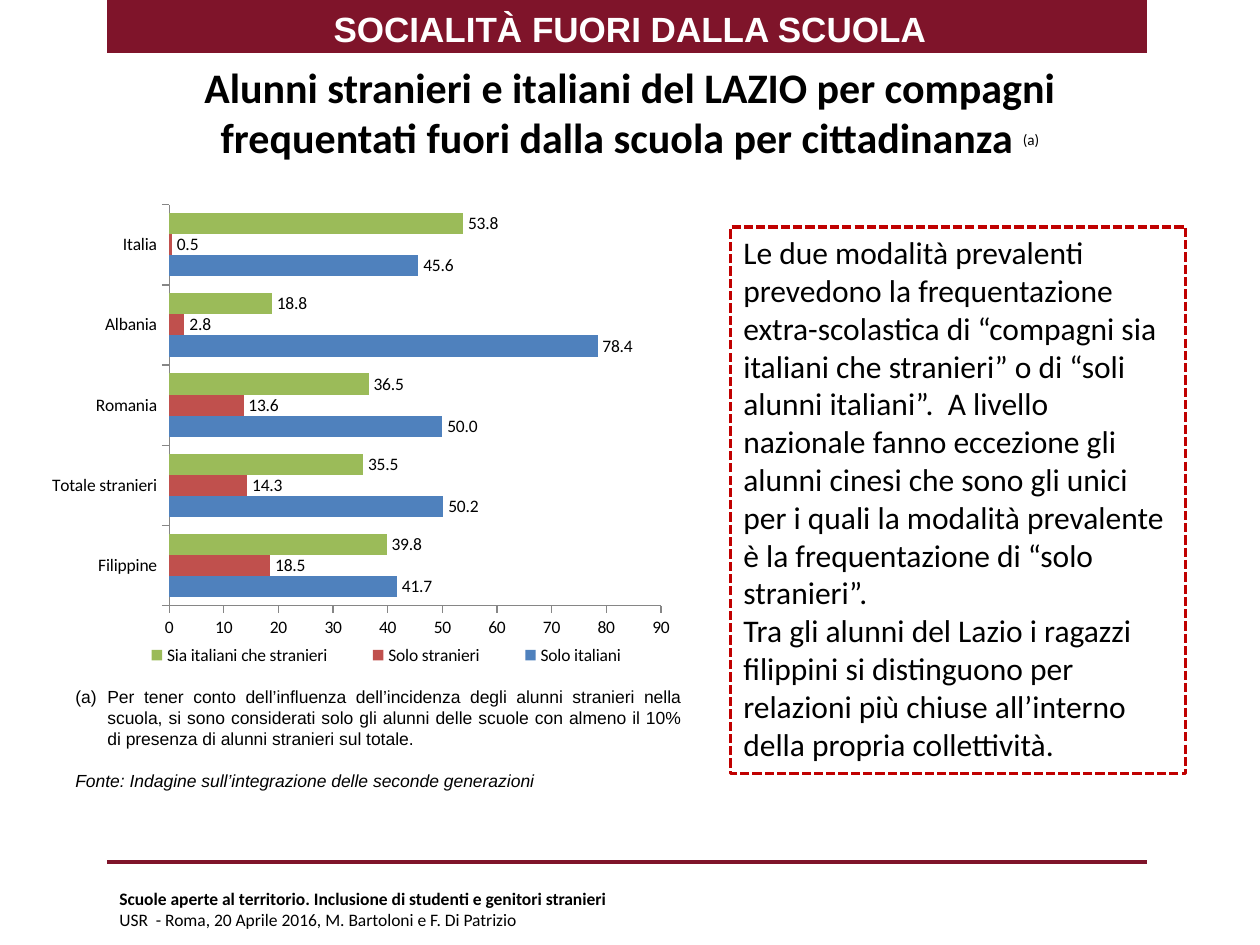
import pptx
import pptx.util
import pptx.chart.data
import pptx.dml.color
import pptx.enum.chart
import pptx.enum.dml
import pptx.enum.shapes
import pptx.enum.text
import pptx.oxml

PX = 914400 // 126
Pt = pptx.util.Pt
RGB = pptx.dml.color.RGBColor
ALIGN = pptx.enum.text.PP_ALIGN
ANCHOR = pptx.enum.text.MSO_ANCHOR
CHART = pptx.enum.chart
NS = 'xmlns:{0}="http://schemas.openxmlformats.org/drawingml/2006/{1}"'

BURGUNDY = RGB(0x7F, 0x14, 0x2A)
DASH_RED = RGB(0xC0, 0x00, 0x00)
BLACK = RGB(0x00, 0x00, 0x00)
WHITE = RGB(0xFF, 0xFF, 0xFF)
AXIS_GREY = RGB(0x86, 0x86, 0x86)
BLUE = RGB(0x4F, 0x81, 0xBD)
RED = RGB(0xC0, 0x50, 0x4D)
GREEN = RGB(0x9B, 0xBB, 0x59)


def add_run(paragraph, text, size, name="Calibri", color=BLACK, **formats):
    run = paragraph.add_run()
    run.text = text
    run.font.color.rgb = color
    for key, value in dict(size=Pt(size), name=name, **formats).items():
        setattr(run.font, key, value)
    return run


def set_layout(element, before, x, y, w, h, inner=False):
    """Place a chart part by fractions of the chart area."""
    target = '<c:layoutTarget val="inner"/>' if inner else ""
    sizes = "".join(f'<c:{key} val="{value}"/>' for key, value in zip("xywh", (x, y, w, h)))
    for old in element.findall(pptx.oxml.ns.qn("c:layout")):
        element.remove(old)
    element.find(pptx.oxml.ns.qn(before)).addprevious(pptx.oxml.parse_xml(
        f'<c:layout {NS.format("c", "chart")}><c:manualLayout>{target}'
        f'<c:xMode val="edge"/><c:yMode val="edge"/>{sizes}</c:manualLayout></c:layout>'))


prs = pptx.Presentation()
prs.slide_width, prs.slide_height = 1260 * PX, 945 * PX
slide = prs.slides.add_slide(prs.slide_layouts[5])
shapes = slide.shapes

# Header band and footer rule
band = shapes.add_shape(pptx.enum.shapes.MSO_SHAPE.RECTANGLE, 107 * PX, 0, 1040 * PX, 53 * PX)
band.shadow.inherit = False
band.fill.solid()
band.fill.fore_color.rgb = BURGUNDY
band.line.fill.background()

rule = shapes.add_connector(pptx.enum.shapes.MSO_CONNECTOR.STRAIGHT,
                            107 * PX, 862 * PX, 1147 * PX, 862 * PX)
rule.line.color.rgb = BURGUNDY
rule.line.width = Pt(2)
rule._element.spPr.append(pptx.oxml.parse_xml(f'<a:effectLst {NS.format("a", "main")}/>'))

# Title
title = shapes.title
title.left, title.top, title.width, title.height = 0, 69 * PX, 1260 * PX, 129 * PX
title_frame = title.text_frame
title_frame.auto_size = pptx.enum.text.MSO_AUTO_SIZE.NONE
title_frame.vertical_anchor = ANCHOR.MIDDLE
title_frame.margin_top, title_frame.margin_bottom = 0, 44 * PX
heading = title_frame.paragraphs[0]
heading.alignment = ALIGN.CENTER
add_run(heading, "Alunni stranieri e italiani del LAZIO per compagni", 24, bold=True)
heading.add_line_break()
line_break = heading._p.find(pptx.oxml.ns.qn("a:br"))
line_break.append(pptx.oxml.parse_xml(f'<a:rPr {NS.format("a", "main")} sz="2400"/>'))
add_run(heading, "frequentati fuori dalla scuola per cittadinanza ", 24, bold=True)
note_mark = add_run(heading, "(a)", 15, bold=False)
note_mark.font._element.set("baseline", "30000")

# Section name on the band
section = shapes.add_textbox(0, -1 * PX, 1260 * PX, 59 * PX).text_frame
section.word_wrap = True
section.vertical_anchor = ANCHOR.MIDDLE
section.paragraphs[0].alignment = ALIGN.CENTER
add_run(section.paragraphs[0], "SOCIALITÀ FUORI DALLA SCUOLA", 20, "Arial", WHITE, bold=True)

# Dashed comment box
comment = shapes.add_shape(pptx.enum.shapes.MSO_SHAPE.RECTANGLE,
                           731 * PX, 227 * PX, 455 * PX, 547 * PX)
comment.shadow.inherit = False
comment.fill.background()
comment.line.color.rgb = DASH_RED
comment.line.width = Pt(1.75)
comment.line.dash_style = pptx.enum.dml.MSO_LINE.SQUARE_DOT
comment_frame = comment.text_frame
comment_frame.word_wrap = True
comment_frame.vertical_anchor = ANCHOR.TOP
findings = [
    "Le due modalità prevalenti prevedono la frequentazione extra-scolastica di “compagni sia "
    "italiani che stranieri” o di “soli alunni italiani”.  A livello nazionale fanno eccezione "
    "gli alunni cinesi che sono gli unici per i quali la modalità prevalente è la "
    "frequentazione di “solo stranieri”.",
    "Tra gli alunni del Lazio i ragazzi filippini si distinguono per relazioni più chiuse "
    "all’interno della propria collettività.",
]
for i, finding in enumerate(findings):
    paragraph = comment_frame.add_paragraph() if i else comment_frame.paragraphs[0]
    paragraph.alignment = ALIGN.LEFT
    add_run(paragraph, finding, 18)

# Bar chart of companions by citizenship
companions = [
    ("Solo italiani", (41.7, 50.2, 50.0, 78.4, 45.6), BLUE),
    ("Solo stranieri", (18.5, 14.3, 13.6, 2.8, 0.5), RED),
    ("Sia italiani che stranieri", (39.8, 35.5, 36.5, 18.8, 53.8), GREEN),
]
data = pptx.chart.data.CategoryChartData()
data.categories = ["Filippine", "Totale stranieri", "Romania", "Albania", "Italia"]
for name, values, _ in companions:
    data.add_series(name, values)
chart = shapes.add_chart(CHART.XL_CHART_TYPE.BAR_CLUSTERED,
                         52 * PX, 185 * PX, 641 * PX, 495 * PX, data).chart
chart.has_title = False
chart.font.size = Pt(10)
chart.font.name = "Calibri"
chart.font.color.rgb = BLACK

plot = chart.plots[0]
plot.gap_width = 80
plot.vary_by_categories = False
for series, (_, _, color) in zip(plot.series, companions):
    series.format.fill.solid()
    series.format.fill.fore_color.rgb = color
    series.invert_if_negative = False
    labels = series.data_labels
    labels.show_value = True
    labels.number_format = "#,##0.0"
    labels.number_format_is_linked = False
    labels.position = CHART.XL_LABEL_POSITION.OUTSIDE_END

for axis in (chart.category_axis, chart.value_axis):
    axis.has_major_gridlines = False
    axis.major_tick_mark = CHART.XL_TICK_MARK.OUTSIDE
    axis.minor_tick_mark = CHART.XL_TICK_MARK.NONE
    axis.format.line.color.rgb = AXIS_GREY
value_axis = chart.value_axis
value_axis.minimum_scale, value_axis.maximum_scale, value_axis.major_unit = 0, 90, 10
value_axis.tick_labels.number_format = "0"
value_axis.tick_labels.number_format_is_linked = False

chart.has_legend = True
chart.legend.position = CHART.XL_LEGEND_POSITION.RIGHT
chart.legend.include_in_layout = False
set_layout(chart.legend._element, "c:overlay", 0.09, 0.92, 0.86, 0.06)
set_layout(chart._chartSpace.chart.plotArea, "c:barChart", 0.18, 0.04, 0.77, 0.81, inner=True)

# Note and source
notes = shapes.add_textbox(63 * PX, 680 * PX, 630 * PX, 118 * PX).text_frame
notes.word_wrap = True
note = notes.paragraphs[0]
note.alignment = ALIGN.JUSTIFY
note_format = note._p.get_or_add_pPr()
note_format.set("marL", str(32 * PX))
note_format.set("indent", str(-32 * PX))
note_format.append(pptx.oxml.parse_xml(
    f'<a:buFont {NS.format("a", "main")} typeface="Arial"/>'))
note_format.append(pptx.oxml.parse_xml(
    f'<a:buAutoNum {NS.format("a", "main")} type="alphaLcParenBoth"/>'))
add_run(note, "Per tener conto dell’influenza dell’incidenza degli alunni stranieri nella scuola, "
        "si sono considerati solo gli alunni delle scuole con almeno il 10% di presenza di "
        "alunni stranieri sul totale.", 10, "Arial")
source = notes.add_paragraph()
source.alignment = ALIGN.JUSTIFY
source.space_before = Pt(12)
add_run(source, "Fonte: Indagine sull’integrazione delle seconde generazioni", 10, "Arial",
        italic=True)

# Footer
footer = shapes.add_textbox(107 * PX, 882 * PX, 1210 * PX, 55 * PX).text_frame
footer.word_wrap = True
add_run(footer.paragraphs[0],
        "Scuole aperte al territorio. Inclusione di studenti e genitori stranieri", 10, bold=True)
add_run(footer.add_paragraph(),
        "USR  - Roma, 20 Aprile 2016, M. Bartoloni e F. Di Patrizio", 10)

prs.save("out.pptx")
